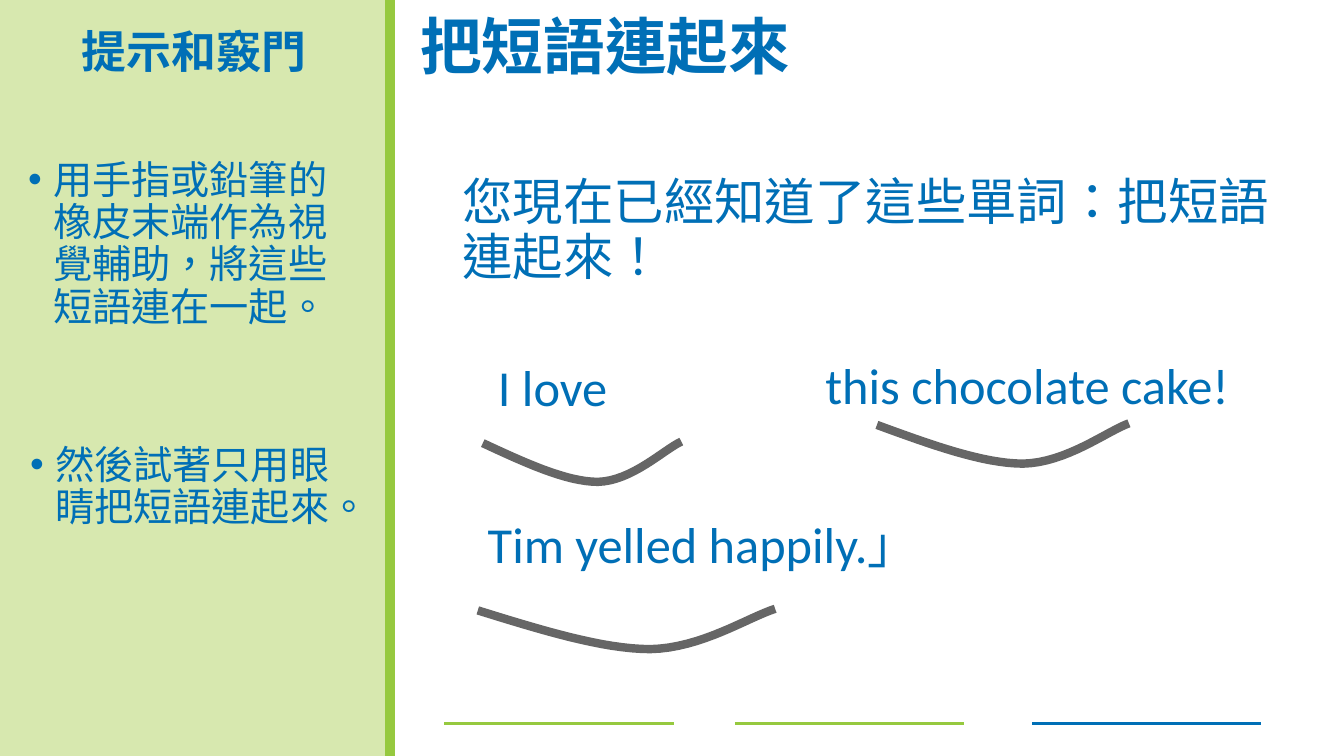
from lxml.etree import SubElement
from pptx import Presentation
from pptx.dml.color import RGBColor
from pptx.enum.lang import MSO_LANGUAGE_ID
from pptx.enum.shapes import MSO_CONNECTOR, MSO_SHAPE
from pptx.enum.text import MSO_ANCHOR, MSO_AUTO_SIZE, PP_ALIGN
from pptx.oxml.ns import qn
from pptx.util import Pt

BLUE = RGBColor(0x00, 0x6F, 0xB6)
GREEN = RGBColor(0x96, 0xC9, 0x3F)
PALE_GREEN = RGBColor(0xD7, 0xE8, 0xAF)
GRAY = RGBColor(0x66, 0x66, 0x66)
LATIN_FONT, CHINESE_FONT = "Calibri", "Noto Sans CJK TC"

# Content; boxes are (left, top, width, height) in points
SLIDE_W, SLIDE_H = 960, 540
SIDEBAR_W = 278.6
TITLE = ("把短語連起來\v", (SIDEBAR_W, 0, 447.8, 123.8))
HEADING = (["提示", "和竅門"], (13, 18, 251.3, 68.4))
TIPS = [
    ("用手指或鉛筆的橡皮末端作為視覺輔助，將這些短語連在一起。", (13, 110.9, 249.8, 177.8)),
    ("然後試著只用眼睛把短語連起來。", (14.4, 314.6, 249.8, 177.8)),
]
PHRASES = [
    ("您現在已經知道了這些單詞：把短語連起來！", (323.3, 123.1, 594, 70.6)),
    ("I love", (330.5, 255.6, 252, 70.6)),
    ("this chocolate cake!", (582.5, 254.2, 369.4, 70.6)),
    ("Tim yelled happily.」", (341.3, 367.9, 332.6, 70.6)),
]
SCOOPS = [(344.9, 315.4, 141.8), (626.4, 302.4, 180), (341.3, 434.9, 212.4)]  # left, top, width
SCOOP_H = 28.8
# Two Bézier pieces, as fractions of a scoop's width and height
SCOOP_CURVE = [
    [(0, 0.04), (0.21, 0.52), (0.42, 1), (0.58, 1)],
    [(0.58, 1), (0.75, 0.98), (0.91, 0.21), (1, 0)],
]
CURVE_STEPS = 16
FOOTER_Y, FOOTER_W = 517, 163.7
FOOTER_RULES = [(317.5, GREEN), (524.9, GREEN), (737.3, BLUE)]

deck = Presentation()
deck.slide_width, deck.slide_height = Pt(SLIDE_W), Pt(SLIDE_H)
slide = deck.slides.add_slide(deck.slide_layouts[5])
shapes = slide.shapes


def add_rule(x1, y1, x2, y2, color, width):
    rule = shapes.add_connector(MSO_CONNECTOR.STRAIGHT, Pt(x1), Pt(y1), Pt(x2), Pt(y2))
    rule.line.color.rgb = color
    rule.line.width = Pt(width)
    SubElement(rule._element.spPr, qn("a:effectLst"))


def style_text(frame, size, bold=False, align=PP_ALIGN.LEFT, bullet=False, left_inset=7.2):
    frame.word_wrap = True
    frame.auto_size = MSO_AUTO_SIZE.NONE
    frame.margin_left, frame.margin_right = Pt(left_inset), Pt(7.2)
    frame.margin_top = frame.margin_bottom = Pt(3.6)
    paragraph = frame.paragraphs[0]
    paragraph.alignment = align
    paragraph.line_spacing = 0.9
    properties = paragraph._p.get_or_add_pPr()
    if bullet:
        properties.set("marL", str(Pt(18)))
        properties.set("indent", str(Pt(-18)))
        SubElement(properties, qn("a:buFont"), typeface="Arial")
        SubElement(properties, qn("a:buChar"), char="•")
    font = paragraph.font
    font.name, font.size, font.bold = LATIN_FONT, Pt(size), bold
    font.color.rgb = BLUE
    font.language_id = MSO_LANGUAGE_ID.TRADITIONAL_CHINESE
    SubElement(properties.find(qn("a:defRPr")), qn("a:ea"), typeface=CHINESE_FONT)


def add_text(text, box, size, **style):
    frame = shapes.add_textbox(*map(Pt, box)).text_frame
    frame.text = text
    style_text(frame, size, **style)
    return frame


def bezier_point(points, t):
    weights = ((1 - t) ** 3, 3 * t * (1 - t) ** 2, 3 * t * t * (1 - t), t**3)
    return tuple(sum(w * p[axis] for w, p in zip(weights, points)) for axis in (0, 1))


# Sidebar and footer rules
sidebar = shapes.add_shape(MSO_SHAPE.RECTANGLE, 0, 0, Pt(SIDEBAR_W), Pt(SLIDE_H))
sidebar.shadow.inherit = False
sidebar.fill.solid()
sidebar.fill.fore_color.rgb = PALE_GREEN
sidebar.line.fill.background()
add_rule(SIDEBAR_W, 0, SIDEBAR_W, SLIDE_H, GREEN, 7)
for left, color in FOOTER_RULES:
    add_rule(left, FOOTER_Y, left + FOOTER_W, FOOTER_Y, color, 2)

# Title
title_text, title_box = TITLE
title = shapes.title
title.left, title.top, title.width, title.height = map(Pt, title_box)
title.text_frame.text = title_text
title.text_frame.vertical_anchor = MSO_ANCHOR.MIDDLE
style_text(title.text_frame, 44, bold=True, left_inset=21.6)

# Tips in the sidebar
(heading_start, heading_end), heading_box = HEADING
heading = add_text(heading_start, heading_box, 32, bold=True, align=PP_ALIGN.CENTER)
heading.paragraphs[0].runs[0].font.name = CHINESE_FONT
heading.paragraphs[0].add_run().text = heading_end
for tip, box in TIPS:
    add_text(tip, box, 28, bullet=True)

# Phrases; the short first one is set in from its box by 18 points
for phrase, box in PHRASES:
    add_text(phrase, box, 36, left_inset=25.2 if phrase == "I love" else 7.2)

# Scoops under the phrases
curve = [bezier_point(piece, step / CURVE_STEPS)
         for piece in SCOOP_CURVE for step in range(CURVE_STEPS + 1)]
for left, top, width in SCOOPS:
    points = [(Pt(left + x * width), Pt(top + y * SCOOP_H)) for x, y in curve]
    builder = shapes.build_freeform(*points[0])
    builder.add_line_segments(points[1:], close=False)
    scoop = builder.convert_to_shape()
    scoop.shadow.inherit = False
    scoop.fill.background()
    scoop.line.color.rgb = GRAY
    scoop.line.width = Pt(6)

deck.save("out.pptx")
